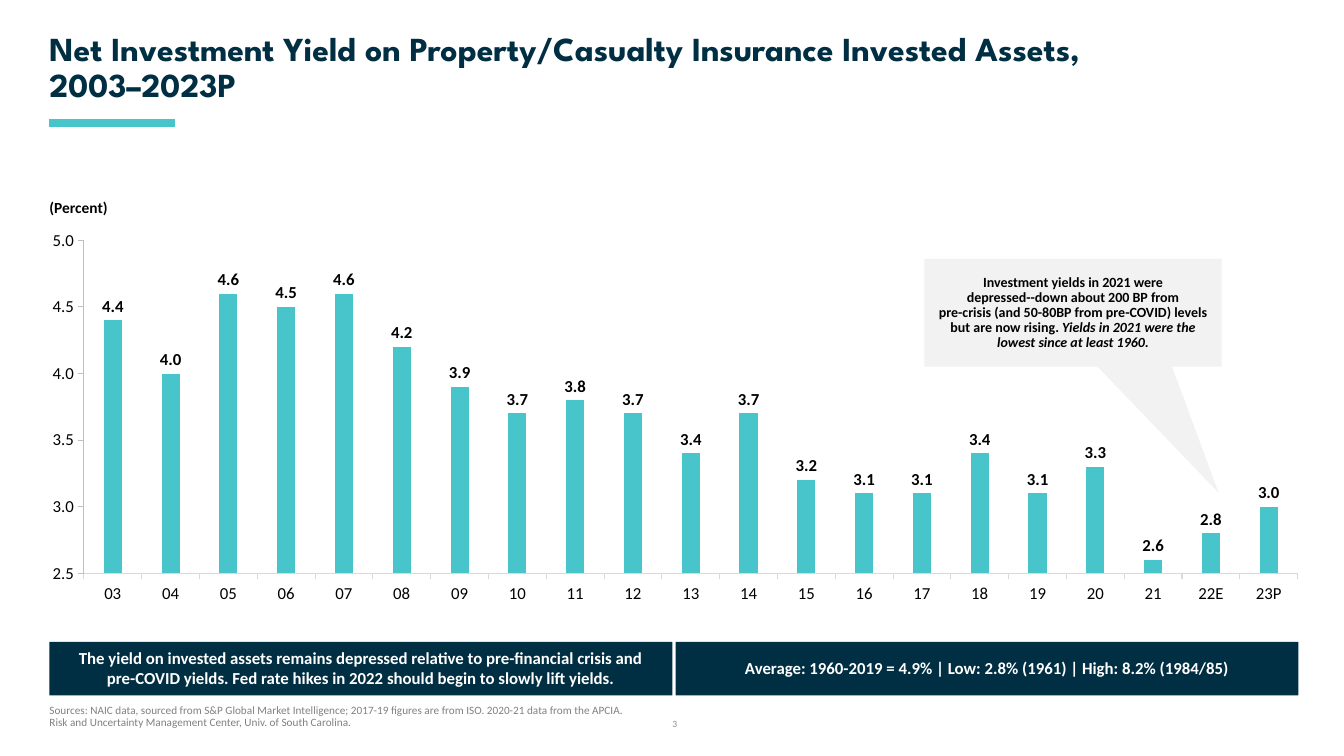
from lxml import etree
from pptx import Presentation
from pptx.chart.data import CategoryChartData
from pptx.dml.color import RGBColor
from pptx.enum.chart import XL_CHART_TYPE as CT, XL_LABEL_POSITION as LP, XL_TICK_MARK as TM
from pptx.enum.shapes import MSO_CONNECTOR as MC, MSO_SHAPE as MS
from pptx.enum.text import MSO_ANCHOR as MA, PP_ALIGN as PA
from pptx.oxml import parse_xml
from pptx.oxml.ns import nsdecls, qn
from pptx.util import Pt

COLORS = {
    "navy": "002E42", "teal": "47C5CA", "callout": "F2F2F2", "white": "FFFFFF",
    "black": "000000", "source": "808080", "number": "8C8C8C",
    "cat_line": "D9D9D9", "val_line": "BFBFBF",
}
LEFT = 35.3
BANNER_W, BANNER_GAP = 445, 2.2


def rgb(name):
    return RGBColor.from_string(COLORS[name])


def set_font(font, size, color="black", bold=False, italic=False, name="Calibri"):
    font.size, font.bold, font.italic, font.name = Pt(size), bold, italic, name
    font.color.rgb = rgb(color)


def put_text(sp, runs, align=PA.LEFT, anchor=MA.TOP, spacing=1.0,
             insets=(7.2, 3.6, 7.2, 3.6), wrap=True, **fmt):
    tf = sp.text_frame
    tf.word_wrap, tf.vertical_anchor = wrap, anchor
    tf.margin_left, tf.margin_top, tf.margin_right, tf.margin_bottom = map(Pt, insets)
    p = tf.paragraphs[0]
    p.alignment, p.line_spacing = align, spacing
    for text, extra in ([(runs, {})] if isinstance(runs, str) else runs):
        for i, line in enumerate(text.split("\n")):
            if i:
                p.add_line_break()
            r = p.add_run()
            r.text = line
            set_font(r.font, **{**fmt, **extra})


class Deck:
    def __init__(self):
        self.prs = Presentation()
        self.prs.slide_width, self.prs.slide_height = Pt(960), Pt(540)
        self.slide = self.prs.slides.add_slide(self.prs.slide_layouts[6])

    def text(self, box, runs, **fmt):
        put_text(self.slide.shapes.add_textbox(*map(Pt, box)), runs, **fmt)

    def shape(self, kind, box, fill, runs, adjust=(), **fmt):
        sp = self.slide.shapes.add_shape(kind, *map(Pt, box))
        sp.shadow.inherit = False
        sp.fill.solid()
        sp.fill.fore_color.rgb = rgb(fill)
        sp.line.fill.background()
        for i, value in enumerate(adjust):
            sp.adjustments[i] = value
        put_text(sp, runs, align=PA.CENTER, anchor=MA.MIDDLE, **fmt)

    def line(self, x1, y1, x2, y2, color, width):
        c = self.slide.shapes.add_connector(MC.STRAIGHT, *map(Pt, (x1, y1, x2, y2)))
        c.line.color.rgb, c.line.width = rgb(color), Pt(width)
        etree.SubElement(c._element.spPr, qn("a:effectLst"))

    def axis(self, axis, line):
        axis.has_major_gridlines = False
        axis.major_tick_mark, axis.minor_tick_mark = TM.OUTSIDE, TM.NONE
        axis.format.line.color.rgb, axis.format.line.width = rgb(line), Pt(0.75)
        set_font(axis.tick_labels.font, 12)

    def columns(self, box, name, cats, vals, plot_area):
        data = CategoryChartData(number_format="0.0")
        data.categories = cats
        data.add_series(name, vals)
        chart = self.slide.shapes.add_chart(CT.COLUMN_CLUSTERED, *map(Pt, box), data).chart
        chart.has_legend = chart.has_title = False
        set_font(chart.font, 12)

        self.axis(chart.category_axis, "cat_line")
        val = chart.value_axis
        self.axis(val, "val_line")
        val.minimum_scale, val.maximum_scale, val.major_unit = 2.5, 5, 0.5
        val.tick_labels.number_format = "#,##0.0"
        val.tick_labels.number_format_is_linked = False

        plot = chart.plots[0]
        plot.gap_width, plot.overlap, plot.vary_by_categories = 219, -27, False
        fill = plot.series[0].format.fill
        fill.solid()
        fill.fore_color.rgb = rgb("teal")
        plot.has_data_labels = True
        labels = plot.data_labels
        labels.show_value, labels.position = True, LP.OUTSIDE_END
        labels.number_format, labels.number_format_is_linked = "#,##0.0", False
        set_font(labels.font, 12, bold=True)

        area = chart._chartSpace.chart.plotArea
        for old in area.findall(qn("c:layout")):
            area.remove(old)
        modes = '<c:layoutTarget val="inner"/><c:xMode val="edge"/><c:yMode val="edge"/>'
        sizes = "".join(f'<c:{k} val="{v}"/>' for k, v in zip("xywh", plot_area))
        area.insert(0, parse_xml(
            f'<c:layout {nsdecls("c")}><c:manualLayout>{modes}{sizes}</c:manualLayout></c:layout>'))


def main():
    d = Deck()
    d.text((LEFT, 18.7, 899.3, 59.8),
           "Net Investment Yield on Property/Casualty Insurance Invested Assets,\n2003–2023P",
           anchor=MA.BOTTOM, spacing=0.9, insets=(0, 3.6, 7.2, 3.6),
           size=24, color="navy", bold=True, name="League Spartan")
    d.line(LEFT, 87.8, LEFT + 90, 87.8, "teal", 6)
    d.text((LEFT, 142.6, 42.5, 12.2), "(Percent)", anchor=MA.MIDDLE, spacing=0.9,
           insets=(0, 0, 0, 0), wrap=False, size=11, bold=True)

    years = [f"{y:02d}" for y in range(3, 22)] + ["22E", "23P"]
    yields = [4.4, 4.0, 4.6, 4.5, 4.6, 4.2, 3.9, 3.7, 3.8, 3.7, 3.4,
              3.7, 3.2, 3.1, 3.1, 3.4, 3.1, 3.3, 2.6, 2.8, 3.0]
    d.columns((33.1, 154.8, 894.2, 280.1), "Net investment yield", years, yields,
              (0.03, 0.06, 0.97, 0.85))

    d.shape(MS.RECTANGULAR_CALLOUT, (660.2, 185, 212.4, 77), "callout", [
        ("Investment yields in 2021 were\ndepressed--down about 200 BP from\n"
         "pre-crisis (and 50-80BP from pre-COVID) levels but are now rising. ", {}),
        ("Yields in 2021 were the lowest since at least 1960", {"italic": True}),
        (".", {}),
    ], adjust=(0.49, 1.67), spacing=0.9, size=10, bold=True)

    banners = [
        "The yield on invested assets remains depressed relative to pre-financial crisis and\n"
        "pre-COVID yields. Fed rate hikes in 2022 should begin to slowly lift yields.",
        "Average: 1960-2019 = 4.9% | Low: 2.8% (1961) | High: 8.2% (1984/85)",
    ]
    for i, banner in enumerate(banners):
        d.shape(MS.RECTANGLE, (LEFT + i * (BANNER_W + BANNER_GAP), 458.6, BANNER_W, 38.2),
                "navy", banner, spacing=0.95, size=12, color="white", bold=True)

    d.text((LEFT, 504, 680.4, 16.6),
           "Sources: NAIC data, sourced from S&P Global Market Intelligence; 2017-19 figures "
           "are from ISO. 2020-21 data from the APCIA.\n"
           "Risk and Uncertainty Management Center, Univ. of South Carolina.",
           spacing=0.85, insets=(0, 0, 0, 0), size=8, color="source")
    d.text((401, 509.8, 162, 14.4), "3", align=PA.CENTER, anchor=MA.MIDDLE,
           size=6.8, color="number")
    d.prs.save("out.pptx")


if __name__ == "__main__":
    main()
